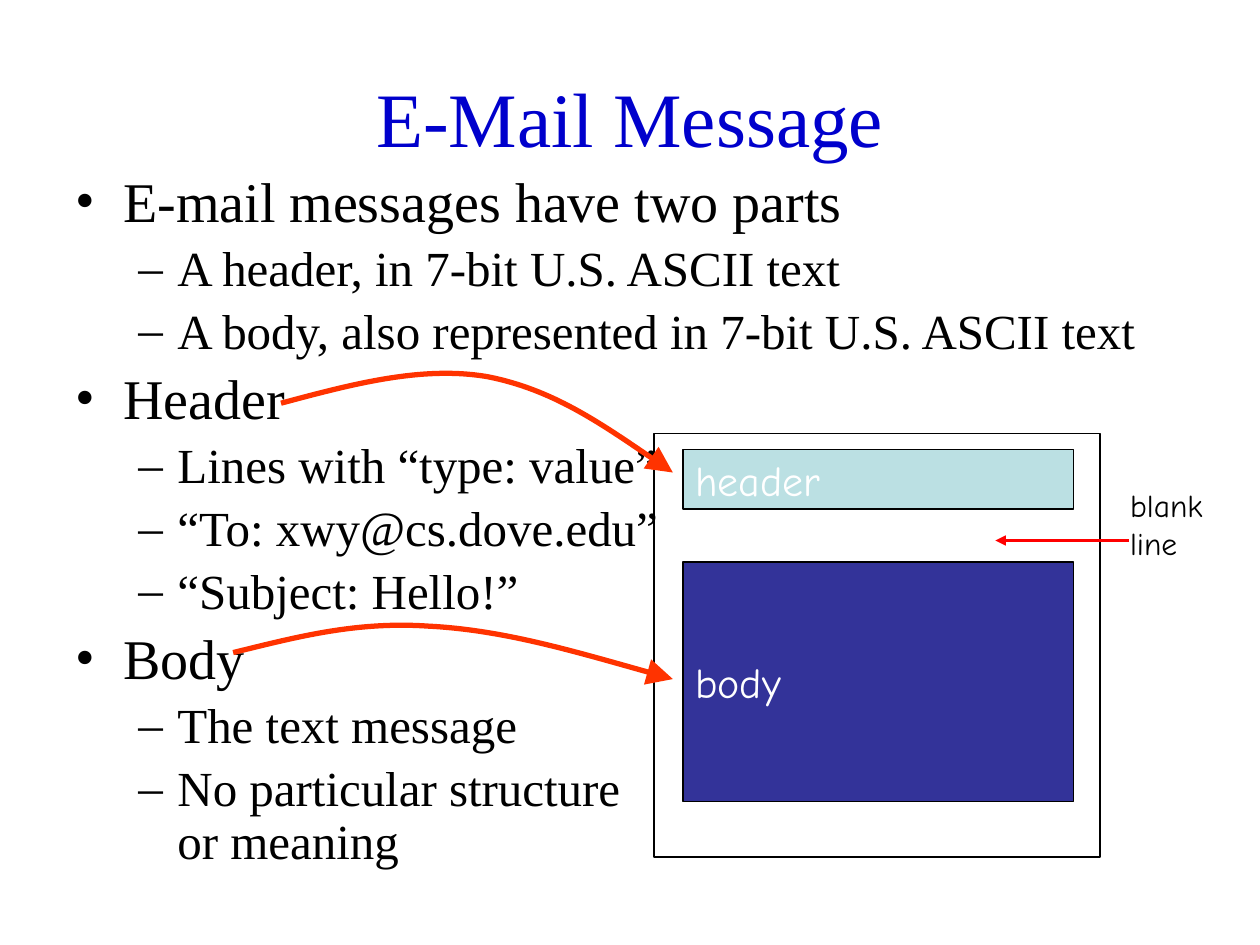
import pptx
import pptx.dml.color
import pptx.enum.shapes
import pptx.enum.text
import pptx.oxml
import pptx.oxml.ns
import pptx.util
from pptx.util import Inches

SERIF = "Times New Roman"
HAND = "Comic Neue"
ALIGN = pptx.enum.text.PP_ALIGN
ANCHOR = pptx.enum.text.MSO_ANCHOR

# (level, text)
OUTLINE = [
    (0, "E-mail messages have two parts"),
    (1, "A header, in 7-bit U.S. ASCII text"),
    (1, "A body, also represented in 7-bit U.S. ASCII text"),
    (0, "Header"),
    (1, "Lines with “type: value”"),
    (1, "“To: xwy@cs.dove.edu”"),
    (1, "“Subject: Hello!”"),
    (0, "Body"),
    (1, "The text message"),
    (1, "No particular structure \nor meaning"),
]
# Per level: size, bullet, left margin, hanging indent
LEVELS = [(32, "•", 0.38, -0.38), (28, "–", 0.81, -0.31)]


def color(value):
    return pptx.dml.color.RGBColor.from_string(value)


def append_child(parent, tag, **attributes):
    child = parent.makeelement(pptx.oxml.ns.qn(tag), attributes)
    parent.append(child)


def write(paragraph, text, size, font=SERIF, ink="000000", align=ALIGN.LEFT):
    paragraph.text = text
    paragraph.alignment = align
    for run in paragraph.runs:
        run.font.name = font
        run.font.size = pptx.util.Pt(size)
        run.font.color.rgb = color(ink)


def set_line(shape, ink, width):
    shape.line.color.rgb = color(ink)
    shape.line.width = pptx.util.Pt(width)


def add_arrowhead(shape, size="med"):
    line = shape._element.spPr.find(pptx.oxml.ns.qn("a:ln"))
    append_child(line, "a:tailEnd", type="triangle", w=size, len=size)


def add_text_frame(slide, left, top, width, height, wrap=True, anchor=ANCHOR.TOP):
    box = slide.shapes.add_textbox(Inches(left), Inches(top), Inches(width), Inches(height))
    frame = box.text_frame
    frame.word_wrap = wrap
    frame.vertical_anchor = anchor
    return frame


def add_paragraph(frame, index):
    return frame.paragraphs[0] if index == 0 else frame.add_paragraph()


def add_outline(slide):
    frame = add_text_frame(slide, 0.5, 1.33, 9.25, 5.82)
    for index, (level, text) in enumerate(OUTLINE):
        size, bullet, margin, indent = LEVELS[level]
        paragraph = add_paragraph(frame, index)
        write(paragraph, text, size)
        paragraph.level = level
        paragraph.line_spacing = 0.9
        paragraph.space_before = pptx.util.Pt(round(size * 0.2, 1))
        properties = paragraph._p.get_or_add_pPr()
        properties.set("marL", str(Inches(margin)))
        properties.set("indent", str(Inches(indent)))
        append_child(properties, "a:buFont", typeface=SERIF)
        append_child(properties, "a:buChar", char=bullet)


def add_box(slide, left, top, width, height, fill=None, label=None, border=0.75):
    box = slide.shapes.add_shape(
        pptx.enum.shapes.MSO_SHAPE.RECTANGLE,
        Inches(left), Inches(top), Inches(width), Inches(height))
    box.shadow.inherit = False
    set_line(box, "000000", border)
    if fill:
        box.fill.solid()
        box.fill.fore_color.rgb = color(fill)
    else:
        box.fill.background()
    if label:
        box.text_frame.word_wrap = False
        box.text_frame.vertical_anchor = ANCHOR.MIDDLE
        write(box.text_frame.paragraphs[0], label, 24, HAND, "FFFFFF")


def add_straight_arrow(slide, start, end, ink, width):
    arrow = slide.shapes.add_connector(
        pptx.enum.shapes.MSO_CONNECTOR.STRAIGHT, *map(Inches, start + end))
    set_line(arrow, ink, width)
    add_arrowhead(arrow)
    append_child(arrow._element.spPr, "a:effectLst")


def add_curved_arrow(slide, start, points):
    """Draw cubic curves; each three points are two controls and an end."""
    builder = slide.shapes.build_freeform(*map(Inches, start))
    builder.add_line_segments([(Inches(x), Inches(y)) for x, y in points], close=False)
    arrow = builder.convert_to_shape()
    arrow.shadow.inherit = False
    arrow.fill.background()
    set_line(arrow, "FF3300", 3)
    add_arrowhead(arrow, "lg")

    # Turn each three line segments into one cubic curve
    segments = list(arrow._element.iter(pptx.oxml.ns.qn("a:lnTo")))
    for first in range(0, len(segments), 3):
        curve = segments[first].makeelement(pptx.oxml.ns.qn("a:cubicBezTo"))
        segments[first].addprevious(curve)
        for segment in segments[first:first + 3]:
            curve.append(segment[0])
            segment.getparent().remove(segment)


def main():
    deck = pptx.Presentation()
    deck.slide_width, deck.slide_height = Inches(10), Inches(7.5)
    slide = deck.slides.add_slide(deck.slide_layouts[6])

    # Title and outline
    title = add_text_frame(slide, 0.5, 0.3, 9, 1.25, anchor=ANCHOR.MIDDLE)
    write(title.paragraphs[0], "E-Mail Message", 44, ink="0000CC", align=ALIGN.CENTER)
    add_outline(slide)

    # Message diagram
    add_box(slide, 5.42, 3.57, 3.1, 0.47, "BBE0E3", "header")
    add_box(slide, 5.42, 4.46, 3.1, 1.9, "333399", "body")
    add_box(slide, 5.19, 3.44, 3.54, 3.36, border=1)

    # Blank line note
    note = add_text_frame(slide, 8.87, 3.81, 0.88, 0.77, wrap=False)
    for index, word in enumerate(["blank", "line"]):
        write(add_paragraph(note, index), word, 18, HAND)
    add_straight_arrow(slide, (8.96, 4.29), (7.9, 4.29), "FF0000", 1.5)

    # Arrows from the outline to the diagram
    add_curved_arrow(slide, (2.23, 3.2), [
        (2.79, 3.05), (3.35, 2.9), (3.87, 2.99),
        (4.38, 3.09), (4.86, 3.42), (5.34, 3.75)])
    add_curved_arrow(slide, (1.85, 5.18), [
        (2.34, 5.06), (2.82, 4.93), (3.4, 4.97),
        (3.99, 5), (4.66, 5.2), (5.34, 5.39)])

    deck.save("out.pptx")


if __name__ == "__main__":
    main()
